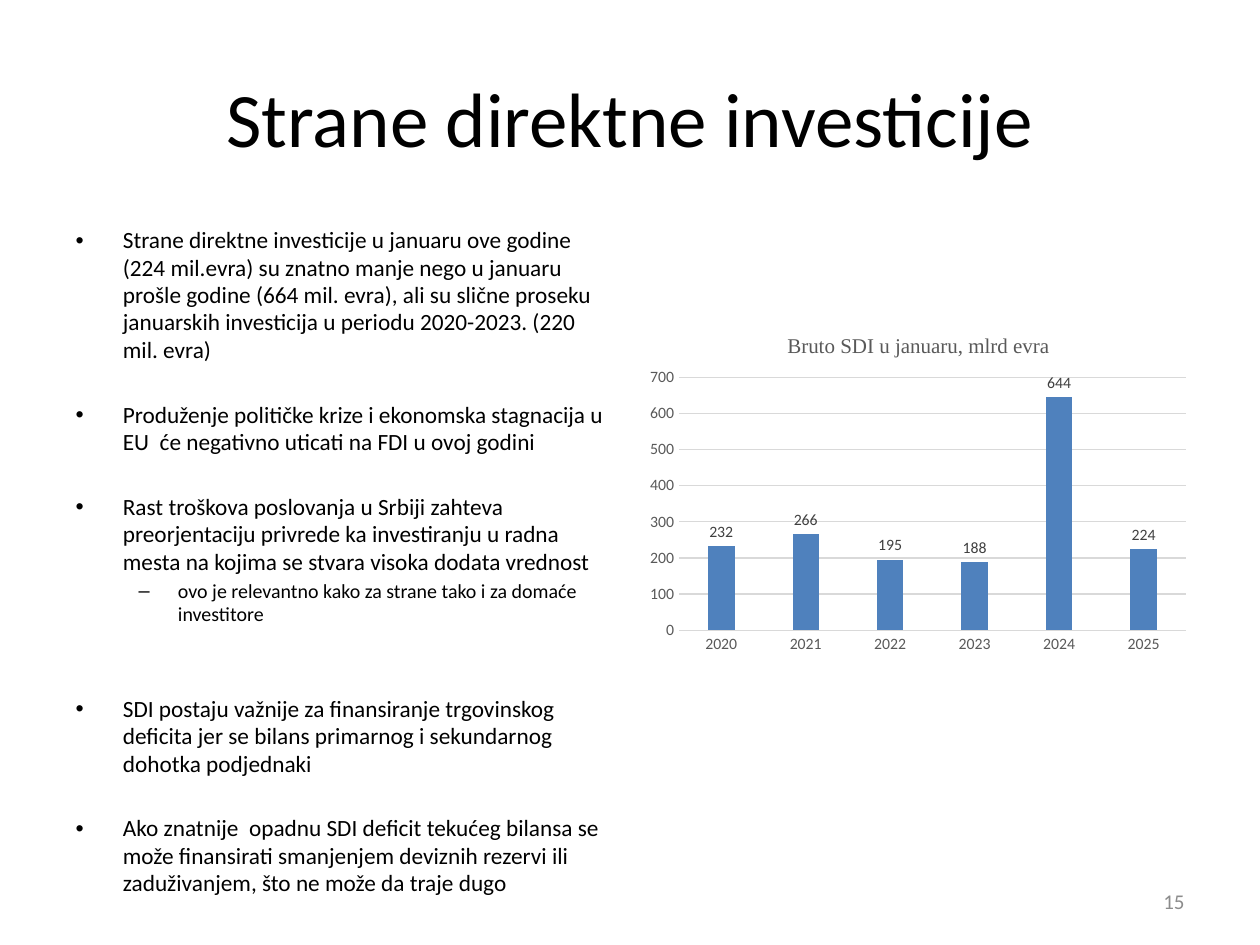
from lxml import etree
from pptx import Presentation
from pptx.chart.data import CategoryChartData
from pptx.dml.color import RGBColor
from pptx.enum.chart import XL_CHART_TYPE as ChartType, XL_LABEL_POSITION as LabelPos
from pptx.enum.chart import XL_TICK_MARK as Tick
from pptx.enum.text import MSO_ANCHOR as Anchor, MSO_AUTO_SIZE as AutoSize, PP_ALIGN as Align
from pptx.oxml.ns import qn
from pptx.util import Inches, Pt

BLACK = RGBColor(0x00, 0x00, 0x00)
BLUE = RGBColor(0x4F, 0x81, 0xBD)
GRID = RGBColor(0xD9, 0xD9, 0xD9)
AXIS_TEXT = RGBColor(0x59, 0x59, 0x59)
LABEL_TEXT = RGBColor(0x40, 0x40, 0x40)
NUMBER_TEXT = RGBColor(0x8C, 0x8C, 0x8C)

TITLE = "Strane direktne investicije"
# level, space before in points, text
BULLETS = [
    (0, 2.7, "Strane direktne investicije u januaru ove godine (224 mil.evra) su znatno manje "
             "nego u januaru prošle godine (664 mil. evra), ali su slične proseku januarskih "
             "investicija u periodu 2020-2023. (220 mil. evra)"),
    (0, 21.4, "Produženje političke krize i ekonomska stagnacija u EU  će negativno uticati "
              "na FDI u ovoj godini"),
    (0, 21.4, "Rast troškova poslovanja u Srbiji zahteva  preorjentaciju privrede ka "
              "investiranju u radna mesta na kojima se stvara visoka dodata vrednost"),
    (1, 2.3, "ovo je relevantno kako za strane tako i za domaće investitore"),
    (0, 39.5, "SDI postaju važnije za finansiranje trgovinskog deficita jer se bilans "
              "primarnog i sekundarnog dohotka podjednaki"),
    (0, 21.4, "Ako znatnije  opadnu SDI deficit tekućeg bilansa se može finansirati smanjenjem "
              "deviznih rezervi ili zaduživanjem, što ne može da traje dugo"),
]
LEVEL_SIZES = [13.3, 11.4]
SLIDE_NUMBER = "15"
CHART_TITLE = "Bruto SDI u januaru, mlrd evra"
INVESTMENTS = {"2020": 232, "2021": 266, "2022": 195, "2023": 188, "2024": 644, "2025": 224}
PLOT_AREA = {"x": 0.07, "y": 0.18, "w": 0.91, "h": 0.73}


def place(shape, left, top, width, height):
    shape.left, shape.top = Inches(left), Inches(top)
    shape.width, shape.height = Inches(width), Inches(height)


def style(font, size, color, name="Calibri"):
    font.size, font.name, font.bold = Pt(size), name, False
    font.color.rgb = color


def add_run(p, text, size, color):
    r = p.add_run()
    r.text = text
    style(r.font, size, color)


def set_plot_layout(chart, box):
    """Fix the inner plot area as fractions of the chart."""
    plot_area = chart._chartSpace.chart.plotArea
    for old in plot_area.findall(qn("c:layout")):
        plot_area.remove(old)
    layout = etree.Element(qn("c:layout"))
    plot_area.insert(0, layout)
    manual = etree.SubElement(layout, qn("c:manualLayout"))
    settings = {"layoutTarget": "inner", "xMode": "edge", "yMode": "edge", **box}
    for tag, value in settings.items():
        etree.SubElement(manual, qn(f"c:{tag}")).set("val", str(value))


def add_investment_chart(s):
    data = CategoryChartData(number_format="0")
    data.categories = list(INVESTMENTS)
    data.add_series("Series 1", list(INVESTMENTS.values()))
    chart = s.shapes.add_chart(ChartType.COLUMN_CLUSTERED, Inches(5.08), Inches(2.5),
                               Inches(4.42), Inches(2.75), data).chart
    style(chart.font, 10, BLACK)
    chart.has_legend = False
    chart.has_title = True
    r = chart.chart_title.text_frame.paragraphs[0].add_run()
    r.text = CHART_TITLE
    style(r.font, 12, AXIS_TEXT, "Times New Roman")

    for axis in (chart.category_axis, chart.value_axis):
        axis.major_tick_mark = axis.minor_tick_mark = Tick.NONE
        style(axis.tick_labels.font, 9, AXIS_TEXT)
    values = chart.value_axis
    values.minimum_scale, values.maximum_scale, values.major_unit = 0, 700, 100
    values.tick_labels.number_format = "#,##0"
    values.tick_labels.number_format_is_linked = False
    values.format.line.fill.background()
    for line in (chart.category_axis.format.line, values.major_gridlines.format.line):
        line.color.rgb = GRID
        line.width = Pt(0.75)

    plot = chart.plots[0]
    plot.gap_width, plot.overlap, plot.vary_by_categories = 219, -27, False
    fill = plot.series[0].format.fill
    fill.solid()
    fill.fore_color.rgb = BLUE
    plot.has_data_labels = True
    labels = plot.data_labels
    labels.show_value = True
    labels.position = LabelPos.OUTSIDE_END
    labels.number_format, labels.number_format_is_linked = "0", False
    style(labels.font, 9, LABEL_TEXT)
    set_plot_layout(chart, PLOT_AREA)


def main():
    prs = Presentation()
    prs.slide_width, prs.slide_height = Inches(10), Inches(7.5)
    s = prs.slides.add_slide(prs.slide_layouts[1])

    title, body = s.placeholders
    place(title, 0.5, 0.3, 9, 1.25)
    add_run(title.text_frame.paragraphs[0], TITLE, 44, BLACK)

    place(body, 0.5, 1.75, 4.42, 4.95)
    tf = body.text_frame
    tf.auto_size = AutoSize.NONE
    for i, (level, space, text) in enumerate(BULLETS):
        p = tf.add_paragraph() if i else tf.paragraphs[0]
        p.level, p.space_before, p.line_spacing = level, Pt(space), 0.98
        add_run(p, text, LEVEL_SIZES[level], BLACK)

    add_investment_chart(s)

    number = s.shapes.add_textbox(Inches(7.17), Inches(6.95), Inches(2.33), Inches(0.4))
    tf = number.text_frame
    tf.word_wrap, tf.vertical_anchor = True, Anchor.MIDDLE
    p = tf.paragraphs[0]
    p.alignment = Align.RIGHT
    add_run(p, SLIDE_NUMBER, 12, NUMBER_TEXT)

    prs.save("out.pptx")


if __name__ == "__main__":
    main()
